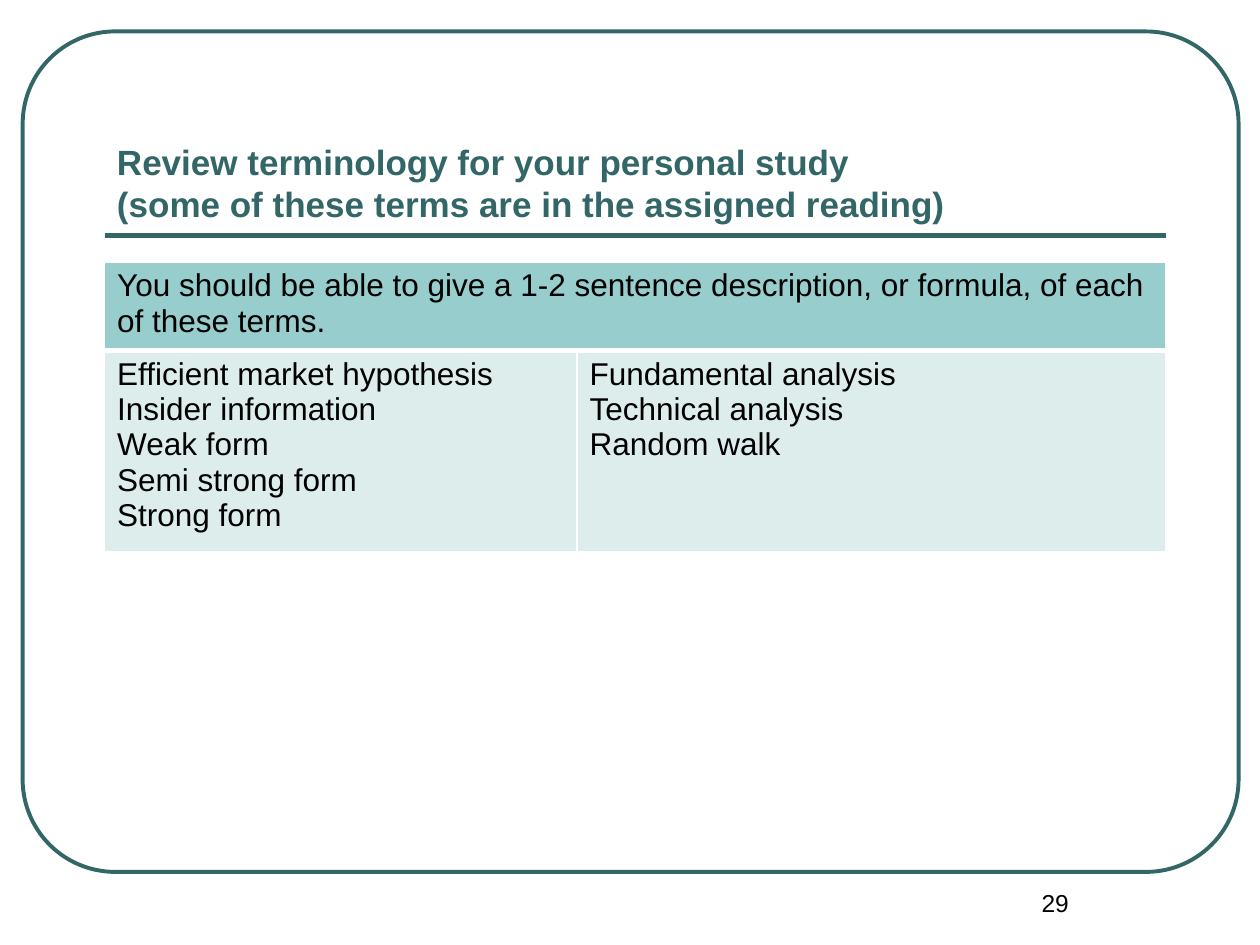
from dataclasses import dataclass

import pptx
import pptx.dml.color
import pptx.enum.shapes
import pptx.enum.text
import pptx.oxml.ns
import pptx.util
from lxml import etree

Inches = pptx.util.Inches
Pt = pptx.util.Pt
RGBColor = pptx.dml.color.RGBColor
qn = pptx.oxml.ns.qn
Anchor = pptx.enum.text.MSO_ANCHOR
Align = pptx.enum.text.PP_ALIGN

TEAL = RGBColor(0x33, 0x66, 0x66)
HEADER_FILL = RGBColor(0x97, 0xCD, 0xCC)
BODY_FILL = RGBColor(0xDD, 0xED, 0xEC)
BLACK = RGBColor(0, 0, 0)
WHITE = RGBColor(0xFF, 0xFF, 0xFF)

LEFT = 0.83
WIDTH = 8.42


@dataclass(frozen=True)
class TextStyle:
    size: float
    color: RGBColor = BLACK
    bold: bool = False
    align: Align = Align.LEFT


@dataclass(frozen=True)
class TermCell:
    row: int
    column: int
    lines: tuple[str, ...]
    fill: RGBColor
    bottom_border: float = 1


TITLE_STYLE = TextStyle(20, TEAL, bold=True)
TERM_STYLE = TextStyle(18)
NUMBER_STYLE = TextStyle(14, align=Align.CENTER)

TERM_CELLS = (
    TermCell(0, 0, ("You should be able to give a 1-2 sentence description, "
                    "or formula, of each of these terms.",), HEADER_FILL, 3),
    TermCell(1, 0, ("Efficient market hypothesis", "Insider information",
                    "Weak form", "Semi strong form", "Strong form"), BODY_FILL),
    TermCell(1, 1, ("Fundamental analysis", "Technical analysis",
                    "Random walk"), BODY_FILL),
)


def write_run(paragraph, text: str, style: TextStyle) -> None:
    paragraph.alignment = style.align
    run = paragraph.add_run()
    run.text = text
    run.font.name = "Arial"
    run.font.size = Pt(style.size)
    run.font.bold = style.bold
    run.font.color.rgb = style.color


def add_text_box(slide, left: float, top: float, width: float, height: float,
                 anchor: Anchor):
    box = slide.shapes.add_textbox(Inches(left), Inches(top),
                                   Inches(width), Inches(height))
    box.text_frame.word_wrap = True
    box.text_frame.vertical_anchor = anchor
    return box.text_frame


def set_borders(cell, bottom: float) -> None:
    properties = cell._tc.get_or_add_tcPr()
    for side, width in (("L", 1), ("R", 1), ("T", 1), ("B", bottom)):
        border = etree.SubElement(properties, qn(f"a:ln{side}"), w=str(Pt(width)))
        solid = etree.SubElement(border, qn("a:solidFill"))
        etree.SubElement(solid, qn("a:srgbClr"), val=str(WHITE))


def fill_cell(table, term_cell: TermCell) -> None:
    cell = table.cell(term_cell.row, term_cell.column)
    set_borders(cell, term_cell.bottom_border)
    cell.fill.solid()
    cell.fill.fore_color.rgb = term_cell.fill
    frame = cell.text_frame
    for index, line in enumerate(term_cell.lines):
        paragraph = frame.add_paragraph() if index else frame.paragraphs[0]
        write_run(paragraph, line, TERM_STYLE)


def add_decoration(slide) -> None:
    border = slide.shapes.add_shape(
        pptx.enum.shapes.MSO_SHAPE.ROUNDED_RECTANGLE,
        Inches(0.18), Inches(0.25), Inches(9.65), Inches(6.67))
    border.adjustments[0] = 0.11
    border.shadow.inherit = False
    border.fill.background()
    border.line.color.rgb = TEAL
    border.line.width = Pt(2.25)

    title_rule = slide.shapes.add_connector(
        pptx.enum.shapes.MSO_CONNECTOR.STRAIGHT,
        Inches(LEFT), Inches(1.87), Inches(LEFT + WIDTH), Inches(1.87))
    title_rule.line.color.rgb = TEAL
    title_rule.line.width = Pt(3)
    etree.SubElement(title_rule._element.spPr, qn("a:effectLst"))


def add_terms_table(slide) -> None:
    row_heights = (0.66, 1.49)
    table = slide.shapes.add_table(
        2, 2, Inches(LEFT), Inches(2.08),
        Inches(WIDTH), Inches(sum(row_heights))).table
    for column, width in zip(table.columns, (3.75, 4.67)):
        column.width = Inches(width)
    for row, height in zip(table.rows, row_heights):
        row.height = Inches(height)
    table.cell(0, 0).merge(table.cell(0, 1))
    for term_cell in TERM_CELLS:
        fill_cell(table, term_cell)


def main() -> None:
    presentation = pptx.Presentation()
    presentation.slide_width = Inches(10)
    presentation.slide_height = Inches(7.5)
    slide = presentation.slides.add_slide(presentation.slide_layouts[6])

    # Frame and title rule
    add_decoration(slide)

    # Title in two lines
    title = add_text_box(slide, LEFT, 0.58, WIDTH, 1.25, Anchor.BOTTOM).paragraphs[0]
    write_run(title, "Review terminology for your personal study", TITLE_STYLE)
    title.add_line_break()
    write_run(title, "(some of these terms are in the assigned reading)", TITLE_STYLE)

    # Terms
    add_terms_table(slide)

    # Slide number
    number = add_text_box(slide, 7.5, 7, 1.75, 0.5, Anchor.TOP).paragraphs[0]
    write_run(number, "29", NUMBER_STYLE)

    presentation.save("out.pptx")


if __name__ == "__main__":
    main()
